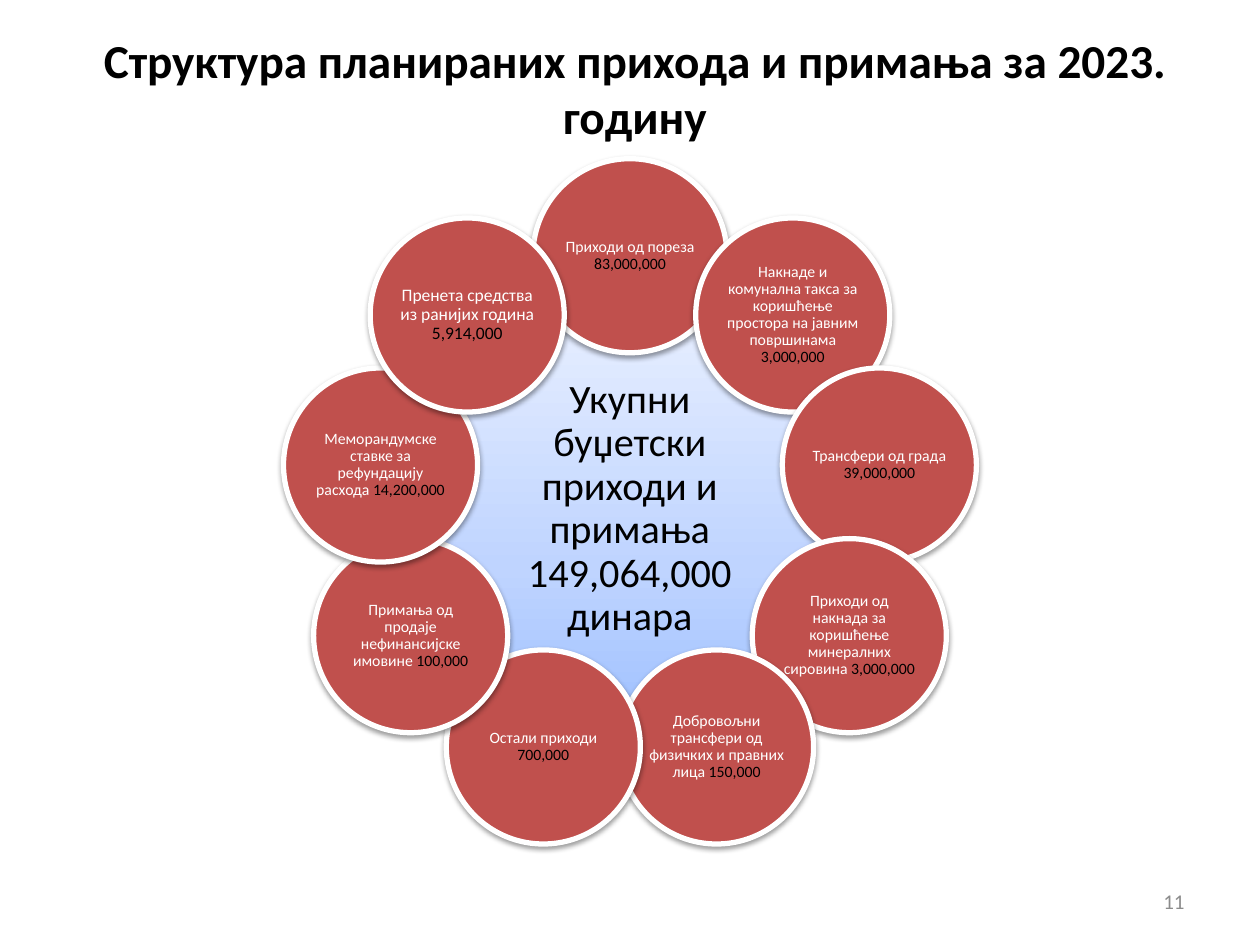
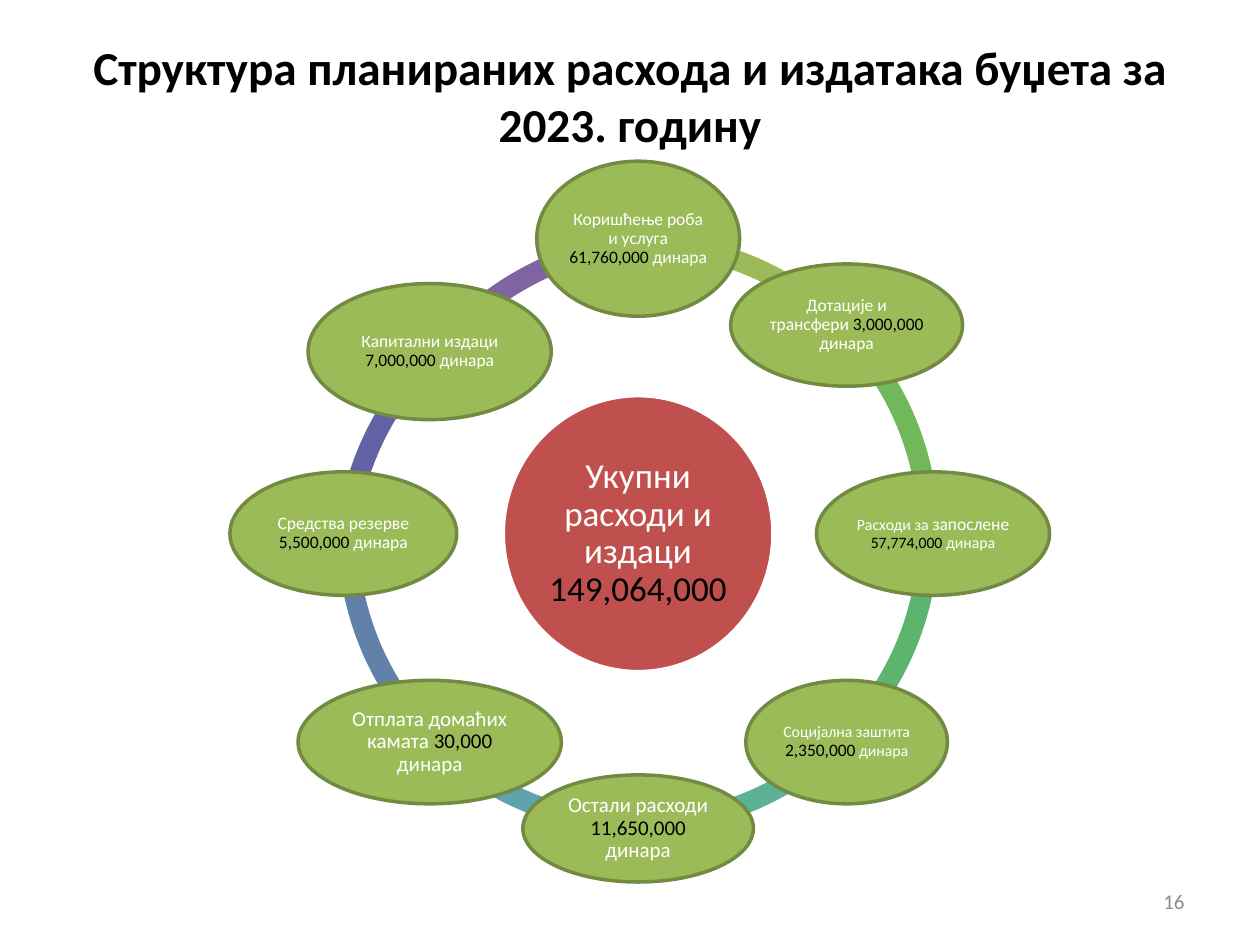
from math import cos, radians, sin

from lxml import etree
from pptx import Presentation
from pptx.dml.color import RGBColor
from pptx.enum.shapes import MSO_SHAPE
from pptx.enum.text import MSO_ANCHOR, PP_ALIGN
from pptx.oxml.ns import qn
from pptx.util import Inches, Pt

ELLIPSE, BLOCK_ARC = MSO_SHAPE.OVAL, MSO_SHAPE.BLOCK_ARC
CENTER, RIGHT, MIDDLE = PP_ALIGN.CENTER, PP_ALIGN.RIGHT, MSO_ANCHOR.MIDDLE
TITLE_ONLY = 5

FONT = "Calibri"
COLUMNS, ROWS = 100, 75
BLACK = RGBColor(0x00, 0x00, 0x00)
WHITE = RGBColor(0xFF, 0xFF, 0xFF)
GREY = RGBColor(0x8C, 0x8C, 0x8C)
RED = RGBColor(0xC0, 0x50, 0x4D)
GREEN = RGBColor(0x9B, 0xBB, 0x59)
DARK_GREEN = RGBColor(0x73, 0x8A, 0x42)
BLUE = RGBColor(0x4B, 0x7E, 0xBC)
CORE_GRADIENT = [
    (0, RGBColor(0xA4, 0xC4, 0xFF)),
    (35, RGBColor(0xBF, 0xD4, 0xFF)),
    (100, RGBColor(0xE6, 0xEE, 0xFF)),
]
ARC_COLOURS = [
    GREEN,
    RGBColor(0x70, 0xB8, 0x5A),
    RGBColor(0x5C, 0xB4, 0x6F),
    RGBColor(0x5D, 0xB1, 0x95),
    RGBColor(0x5F, 0xA4, 0xAD),
    RGBColor(0x61, 0x81, 0xA9),
    RGBColor(0x63, 0x62, 0xA6),
    RGBColor(0x80, 0x64, 0xA2),
]

# Income: label, amount, text size; clockwise from the top
INCOME_CENTER, INCOME_RADIUS, PETAL_SIZE = (50, 40.4), 20.1, (15.4, 15.4)
INCOMES = [
    ("Приходи од пореза ", "83,000,000", 9),
    ("Накнаде и комунална такса за коришћење простора на јавним површинама ",
     "3,000,000", 9),
    ("Трансфери од града ", "39,000,000", 9),
    ("Приходи од накнада за коришћење минералних сировина ", "3,000,000", 9),
    ("Добровољни трансфери од физичких и правних лица ", "150,000", 9),
    ("Остали приходи ", "700,000", 9),
    ("Примања од продаје нефинансијске имовине ", "100,000", 9),
    ("Меморандумске ставке за рефундацију расхода ", "14,200,000", 9),
    ("Пренета средства из ранијих година ", "5,914,000", 10),
]

# Expenses: ellipse size, text size, spans (text, colour, own size if any)
EXPENSE_CENTER, EXPENSE_RADIUS = (50.65, 42.35), 23.4
CURRENCY = ("динара", WHITE)
EXPENSES = [
    ((16.1, 12.3), 10,
     [("Коришћење роба и услуга ", WHITE), ("61,760,000 ", BLACK), CURRENCY]),
    ((18.4, 9.7), 10,
     [("Дотације и трансфери ", WHITE), ("3,000,000 ", BLACK), CURRENCY]),
    ((18.5, 9.8), 9,
     [("Расходи за ", WHITE), ("запослене", WHITE, 10), (" ", WHITE),
      ("57,774,000 ", BLACK), CURRENCY]),
    ((16, 9.8), 9,
     [("Социјална заштита ", WHITE), ("2,350,000", BLACK, 10), (" ", WHITE),
      CURRENCY]),
    ((18.3, 8.5), 12,
     [("Остали расходи ", WHITE), ("11,650,000 ", BLACK), CURRENCY]),
    ((20.9, 9.8), 12,
     [("Отплата домаћих камата ", WHITE), ("30,000 ", BLACK), CURRENCY]),
    ((18, 9.8), 10,
     [("Средства резерве ", WHITE), ("5,500,000 ", BLACK), CURRENCY]),
    ((19.3, 10.8), 10,
     [("Капитални издаци ", WHITE), ("7,000,000 ", BLACK), CURRENCY]),
]
CAPITAL = len(EXPENSES) - 1
CAPITAL_DROP = 2.1  # the last ellipse sits below its place on the ring
ARC_SIZE, ARC_THICKNESS = 47.7, 0.034
# Arcs that meet the lowered ellipse: centre, start and end angle
BENT_ARCS = {
    CAPITAL - 1: ((50.45, 44.75), 185.81, 225.94),
    CAPITAL: ((52.75, 42.25), 217.83, 264.88),
}


def on_ring(center, radius, index, count):
    """Point of an even ring, clockwise from the top."""
    angle = radians(360 * index / count)
    return center[0] + radius * sin(angle), center[1] - radius * cos(angle)


class Deck:
    def __init__(self):
        self.deck = Presentation()
        self.deck.slide_width, self.deck.slide_height = Inches(10), Inches(7.5)
        self.page = None

    def frame(self, left, top, width, height):
        column = self.deck.slide_width / COLUMNS
        row = self.deck.slide_height / ROWS
        return [round(left * column), round(top * row),
                round(width * column), round(height * row)]

    def around(self, center, size):
        return self.frame(center[0] - size[0] / 2, center[1] - size[1] / 2, *size)

    def set_text(self, shape, spans, size, align=CENTER, inset=None, spacing=None,
                 bold=False):
        text = shape.text_frame
        text.word_wrap, text.vertical_anchor = True, MIDDLE
        if inset is not None:
            text.margin_left = text.margin_right = Inches(inset)
            text.margin_top = text.margin_bottom = Inches(inset)
        para = text.paragraphs[0]
        para.alignment = align
        if spacing:
            para.line_spacing = spacing
        para.font.name, para.font.size, para.font.bold = FONT, Pt(size), bold
        for words, colour, *own_size in spans:
            span = para.add_run()
            span.text = words
            span.font.color.rgb = colour
            if own_size:
                span.font.size = Pt(own_size[0])

    def add_page(self, title, number, title_frame):
        layout = self.deck.slide_layouts[TITLE_ONLY]
        self.page = self.deck.slides.add_slide(layout)
        heading = self.page.shapes.title
        heading.left, heading.top, heading.width, heading.height = self.frame(
            *title_frame)
        self.set_text(heading, [(title, BLACK)], 27, bold=True)
        box = self.page.shapes.add_textbox(*self.frame(71.7, 69.5, 23.3, 4))
        self.set_text(box, [(number, GREY)], 12, RIGHT)

    def ellipse(self, center, size, fill, line, weight, spans, text_size,
                inset=0.01, shadow=False):
        shape = self.page.shapes.add_shape(ELLIPSE, *self.around(center, size))
        if isinstance(fill, list):
            self.gradient(shape, fill)
        else:
            shape.fill.solid()
            shape.fill.fore_color.rgb = fill
        shape.line.color.rgb, shape.line.width = line, Pt(weight)
        shape.shadow.inherit = False
        if shadow:
            self.soft_shadow(shape)
        self.set_text(shape, spans, text_size, inset=inset, spacing=0.9)

    def gradient(self, shape, stops):
        shape.fill.gradient()
        shape.fill.gradient_angle = 90
        stop_list = shape.element.spPr.find(".//" + qn("a:gsLst"))
        for old_stop in list(stop_list):
            stop_list.remove(old_stop)
        for share, colour in stops:
            stop = etree.SubElement(stop_list, qn("a:gs"), pos=str(share * 1000))
            etree.SubElement(stop, qn("a:srgbClr"), val=str(colour))

    def soft_shadow(self, shape):
        effects = shape.element.spPr.find(qn("a:effectLst"))
        outer = etree.SubElement(
            effects, qn("a:outerShdw"), blurRad=str(Pt(3.1)), dist=str(Pt(1.6)),
            dir="5400000", rotWithShape="0")
        colour = etree.SubElement(outer, qn("a:srgbClr"), val=str(BLACK))
        etree.SubElement(colour, qn("a:alpha"), val="38000")

    def arc(self, center, start, end, colour):
        shape = self.page.shapes.add_shape(
            BLOCK_ARC, *self.around(center, (ARC_SIZE, ARC_SIZE)))
        # Angles are stored in 60000ths of a degree, adjustments in 100000ths
        shape.adjustments[0] = start % 360 * 0.6
        shape.adjustments[1] = end % 360 * 0.6
        shape.adjustments[2] = ARC_THICKNESS
        shape.fill.solid()
        shape.fill.fore_color.rgb = colour
        shape.line.fill.background()
        shape.shadow.inherit = False


def income_page(deck):
    deck.add_page("Структура планираних прихода и примања за 2023. годину",
                  "11", (5.4, 2.7, 90, 8.5))
    total = "Укупни буџетски приходи и примања 149,064,000 динара"
    deck.ellipse(INCOME_CENTER, (30.8, 30.8), CORE_GRADIENT, BLUE, 0.75,
                 [(total, BLACK)], 23, inset=0.03, shadow=True)
    for index, (label, amount, size) in enumerate(INCOMES):
        center = on_ring(INCOME_CENTER, INCOME_RADIUS, index, len(INCOMES))
        deck.ellipse(center, PETAL_SIZE, RED, WHITE, 3,
                     [(label, WHITE), (amount, BLACK)], size, shadow=True)


def expense_page(deck):
    deck.add_page("Структура планираних расхода и издатака буџета за 2023. годину",
                  "16", (5, 2.9, 90, 9.3))
    # Ring of arcs, the last one at the back
    step = 360 / len(EXPENSES)
    for index in reversed(range(len(EXPENSES))):
        start = 270 + step * index
        center, start, end = BENT_ARCS.get(
            index, (EXPENSE_CENTER, start, start + step))
        deck.arc(center, start, end, ARC_COLOURS[index])
    # Total and its parts
    deck.ellipse(EXPENSE_CENTER, (21.4, 21.9), RED, WHITE, 2,
                 [("Укупни расходи и издаци ", WHITE), ("149,064,000", BLACK)],
                 20, inset=0.03)
    for index, (size, text_size, spans) in enumerate(EXPENSES):
        across, down = on_ring(EXPENSE_CENTER, EXPENSE_RADIUS, index, len(EXPENSES))
        if index == CAPITAL:
            down += CAPITAL_DROP
        deck.ellipse((across, down), size, GREEN, DARK_GREEN, 2, spans, text_size)


def main():
    deck = Deck()
    income_page(deck)
    expense_page(deck)
    deck.deck.save("out.pptx")


if __name__ == "__main__":
    main()
